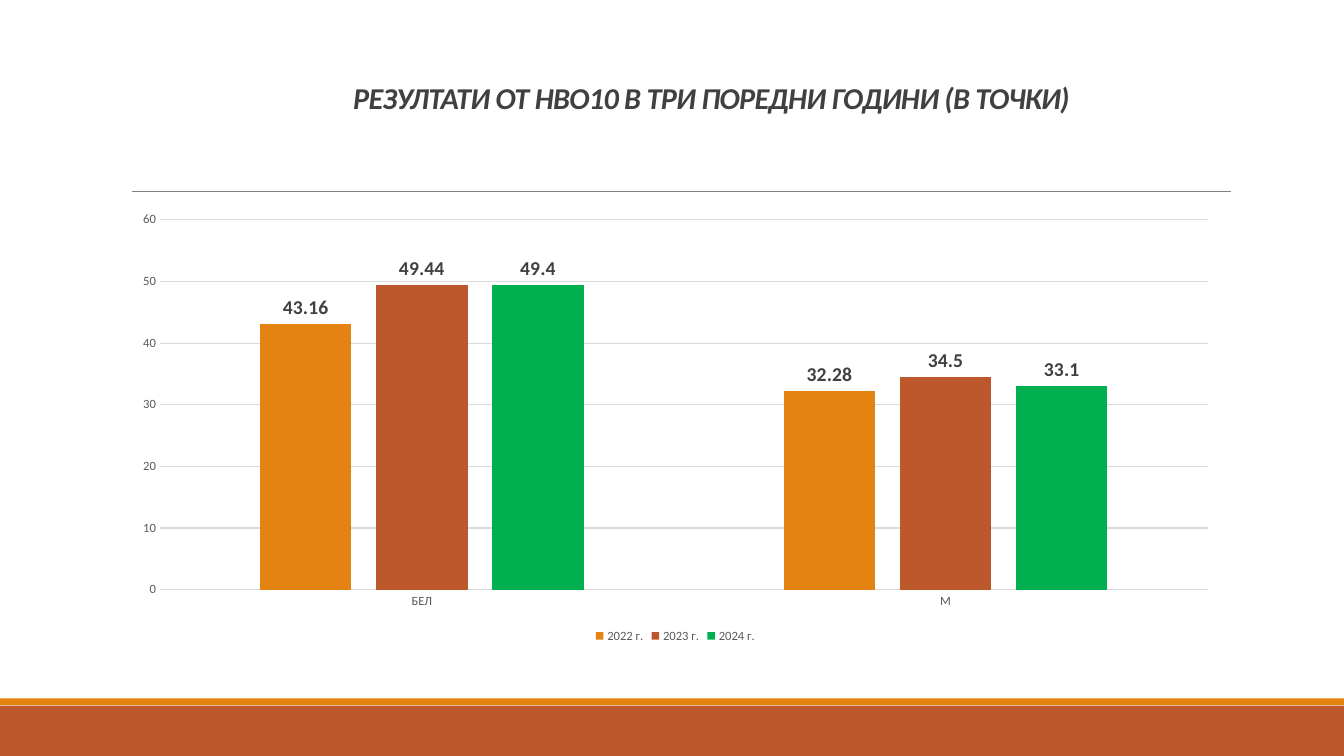
from pptx import Presentation
from pptx.chart.data import CategoryChartData
from pptx.dml.color import RGBColor
from pptx.enum.chart import XL_CHART_TYPE, XL_LABEL_POSITION, XL_LEGEND_POSITION, XL_TICK_MARK
from pptx.enum.shapes import MSO_CONNECTOR, MSO_SHAPE
from pptx.enum.text import MSO_ANCHOR, PP_ALIGN
from pptx.oxml.xmlchemy import OxmlElement
from pptx.util import Cm, Pt

COLUMNS = XL_CHART_TYPE.COLUMN_CLUSTERED
LABEL_ABOVE = XL_LABEL_POSITION.OUTSIDE_END
LEGEND_BOTTOM = XL_LEGEND_POSITION.BOTTOM
NO_TICK = XL_TICK_MARK.NONE
STRAIGHT = MSO_CONNECTOR.STRAIGHT
RECTANGLE = MSO_SHAPE.RECTANGLE
BOTTOM = MSO_ANCHOR.BOTTOM
CENTER = PP_ALIGN.CENTER


def rgb(value):
    return RGBColor.from_string(value)


class SlideBuilder:
    FONT = "Calibri"
    ORANGE, RUST, GREEN = "E48312", "BD582C", "00B050"
    DARK, GRAY, RULE, GRID = "404040", "595959", "808080", "D9D9D9"

    def __init__(self, slide):
        self.s = slide

    def set_font(self, font, size, color, bold=False, italic=False):
        font.name, font.size = self.FONT, Pt(size)
        font.bold, font.italic = bold, italic
        font.color.rgb = rgb(color)

    def band(self, x, y, w, h, color):
        sp = self.s.shapes.add_shape(RECTANGLE, Cm(x), Cm(y), Cm(w), Cm(h))
        sp.shadow.inherit = False
        sp.fill.solid()
        sp.fill.fore_color.rgb = rgb(color)
        sp.line.fill.background()

    def rule(self, x1, x2, y, color, width):
        line = self.s.shapes.add_connector(STRAIGHT, Cm(x1), Cm(y), Cm(x2), Cm(y))
        line.line.color.rgb = rgb(color)
        line.line.width = Pt(width)
        line._element.spPr.append(OxmlElement("a:effectLst"))

    def title(self, x, y, w, h, text):
        tf = self.s.shapes.add_textbox(Cm(x), Cm(y), Cm(w), Cm(h)).text_frame
        tf.word_wrap = True
        tf.vertical_anchor = BOTTOM
        p = tf.paragraphs[0]
        p.alignment = CENTER
        p.line_spacing = 0.85
        self.set_font(p.font, 21.6, self.DARK, bold=True, italic=True)
        r = p.add_run()
        r.text = text
        r._r.get_or_add_rPr().set("spc", "-50")

    def column_chart(self, x, y, w, h, categories, series):
        data = CategoryChartData()
        data.categories = categories
        for name, values, _ in series:
            data.add_series(name, values)
        chart = self.s.shapes.add_chart(COLUMNS, Cm(x), Cm(y), Cm(w), Cm(h), data).chart
        self.set_font(chart.font, 10, "000000")
        chart.has_title = False

        # Legend
        chart.has_legend = True
        chart.legend.position = LEGEND_BOTTOM
        chart.legend.include_in_layout = False
        self.set_font(chart.legend.font, 9, self.GRAY)

        # Axes
        for axis in (chart.category_axis, chart.value_axis):
            axis.major_tick_mark = axis.minor_tick_mark = NO_TICK
            self.set_font(axis.tick_labels.font, 9, self.GRAY)
        chart.value_axis.format.line.fill.background()
        chart.value_axis.minimum_scale = 0
        chart.value_axis.maximum_scale = 60
        chart.value_axis.major_unit = 10
        for item in (chart.category_axis, chart.value_axis.major_gridlines):
            item.format.line.color.rgb = rgb(self.GRID)
            item.format.line.width = Pt(0.75)

        # Columns and their labels
        plot = chart.plots[0]
        plot.gap_width, plot.overlap = 219, -27
        plot.vary_by_categories = False
        for column, (_, _, color) in zip(plot.series, series):
            column.format.fill.solid()
            column.format.fill.fore_color.rgb = rgb(color)
            labels = column.data_labels
            labels.show_value = True
            labels.position = LABEL_ABOVE
            self.set_font(labels.font, 14, self.DARK, bold=True)


def main():
    prs = Presentation()
    prs.slide_width, prs.slide_height = Cm(33.87), Cm(19.05)
    b = SlideBuilder(prs.slides.add_slide(prs.slide_layouts[6]))

    # Footer bands and the rule under the title
    b.band(0, 17.78, 33.87, 1.27, b.RUST)
    b.band(0, 17.6, 33.87, 0.17, b.ORANGE)
    b.rule(3.33, 31.01, 4.83, b.RULE, 0.5)

    # Title
    b.title(3.96, 1.24, 27.94, 1.8, "РЕЗУЛТАТИ ОТ НВО10 В ТРИ ПОРЕДНИ ГОДИНИ (В ТОЧКИ)")

    # Results by subject and year
    b.column_chart(3.05, 5.13, 27.94, 11.18, ["БЕЛ", "М"], [
        ("2022 г.", (43.16, 32.28), b.ORANGE),
        ("2023 г.", (49.44, 34.5), b.RUST),
        ("2024 г.", (49.4, 33.1), b.GREEN),
    ])

    prs.save("out.pptx")


if __name__ == "__main__":
    main()
